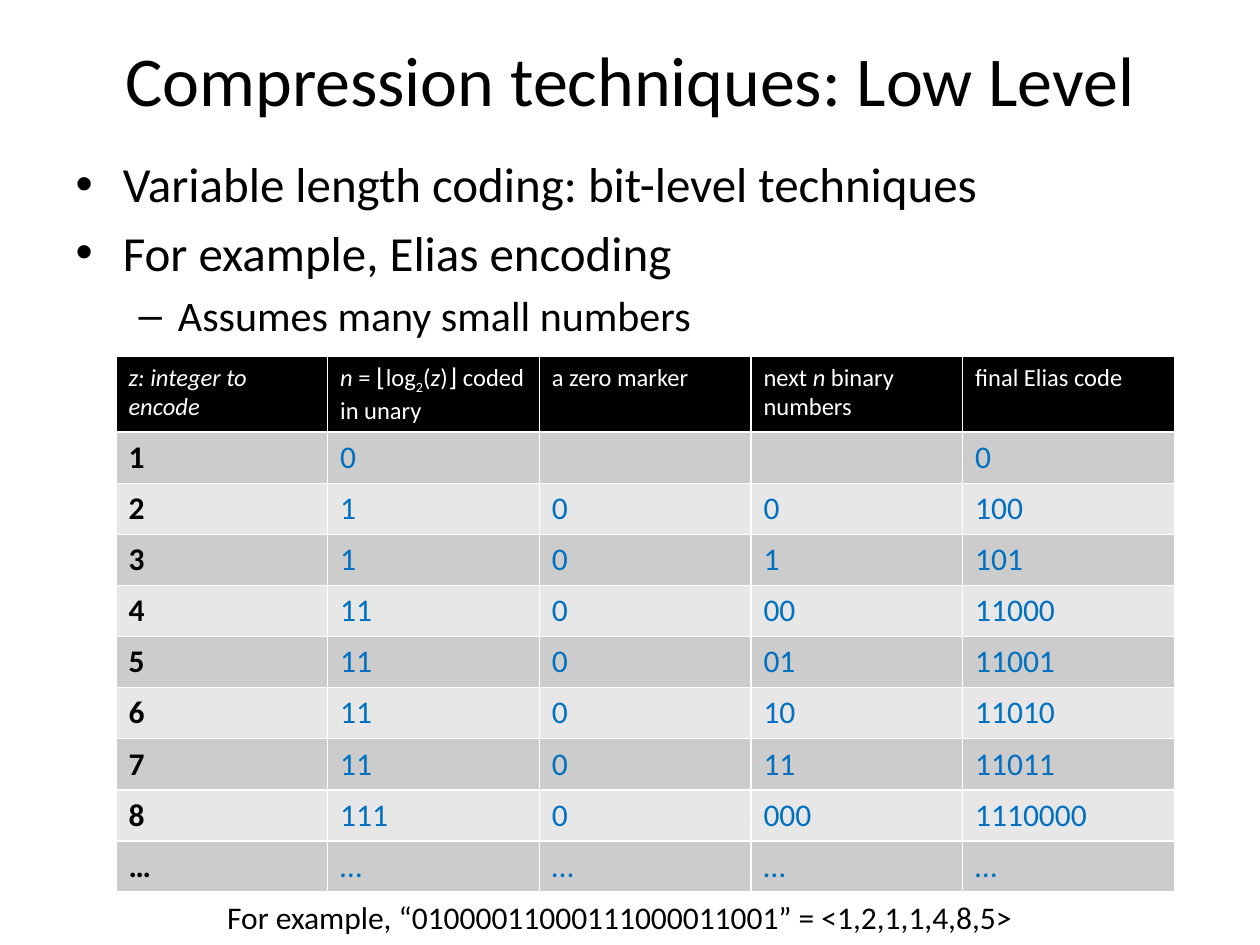
from pptx import Presentation
from pptx.dml.color import RGBColor
from pptx.enum.text import MSO_ANCHOR, PP_ALIGN
from pptx.util import Inches, Pt

CENTER = PP_ALIGN.CENTER
MIDDLE = MSO_ANCHOR.MIDDLE
BLACK, WHITE, BLUE = "000000", "FFFFFF", "0070C0"
DARK_BAND, LIGHT_BAND = "CCCCCC", "E7E7E7"


def color(hex_string):
    return RGBColor.from_string(hex_string)


def add_text(paragraph, text, size=18, fill=BLACK, bold=False, italic=False, subscript=False):
    run = paragraph.add_run()
    run.text = text
    run.font.name = "Calibri"
    run.font.size = Pt(size)
    run.font.bold = bold
    run.font.italic = italic
    run.font.color.rgb = color(fill)
    if subscript:
        run._r.get_or_add_rPr().set("baseline", "-25000")


prs = Presentation()
prs.slide_width, prs.slide_height = Inches(10), Inches(7.5)
slide = prs.slides.add_slide(prs.slide_layouts[1])

title = slide.shapes.title
title.left, title.top, title.width, title.height = Inches(0.5), Inches(0), Inches(9), Inches(1.25)
title.text_frame.vertical_anchor = MIDDLE
heading = title.text_frame.paragraphs[0]
heading.alignment = CENTER
add_text(heading, "Compression techniques: Low Level", size=40)

body = slide.placeholders[1]
body.left, body.top, body.width, body.height = Inches(0.5), Inches(1.17), Inches(9), Inches(5.33)
bullets = [
    ("Variable length coding: bit-level techniques", 0, 28),
    ("For example, Elias encoding", 0, 28),
    ("Assumes many small numbers", 1, 24),
]
for i, (text, level, size) in enumerate(bullets):
    bullet = body.text_frame.add_paragraph() if i else body.text_frame.paragraphs[0]
    bullet.level = level
    add_text(bullet, text, size=size)

headers = [
    [("z: integer to encode", {"italic": True})],
    [
        ("n", {"italic": True}),
        (" = ⌊log", {}),
        ("2", {"subscript": True}),
        ("(", {}),
        ("z", {"italic": True}),
        (")⌋ coded in unary", {}),
    ],
    [("a zero marker", {})],
    [("next ", {}), ("n", {"italic": True}), (" binary numbers", {})],
    [("final Elias code", {})],
]
codes = [["1", "0", "", "", "0"]]
for z in range(2, 9):
    binary = f"{z:b}"[1:]
    unary = "1" * len(binary)
    codes.append([str(z), unary, "0", binary, unary + "0" + binary])
codes.append(["…"] * 5)

elias = slide.shapes.add_table(
    len(codes) + 1, len(headers), Inches(0.92), Inches(2.83), Inches(8.42), Inches(4.17)
).table
for column in elias.columns:
    column.width = Inches(1.68)
for r, row in enumerate(elias.rows):
    row.height = Inches(0.38 if r else 0.54)

for c, runs in enumerate(headers):
    cell = elias.cell(0, c)
    cell.fill.solid()
    cell.fill.fore_color.rgb = color(BLACK)
    for text, style in runs:
        add_text(cell.text_frame.paragraphs[0], text, size=14, fill=WHITE, **style)

for r, code in enumerate(codes, start=1):
    for c, text in enumerate(code):
        cell = elias.cell(r, c)
        cell.fill.solid()
        cell.fill.fore_color.rgb = color(DARK_BAND if r % 2 else LIGHT_BAND)
        if text:
            add_text(cell.text_frame.paragraphs[0], text, fill=BLUE if c else BLACK, bold=c == 0)

example = slide.shapes.add_textbox(Inches(0.92), Inches(7.08), Inches(8), Inches(0.4))
example.text_frame.word_wrap = True
decoding = example.text_frame.paragraphs[0]
decoding.alignment = CENTER
add_text(decoding, "For example, “01000011000111000011001” = <1,2,1,1,4,8,5>")

prs.save("out.pptx")
